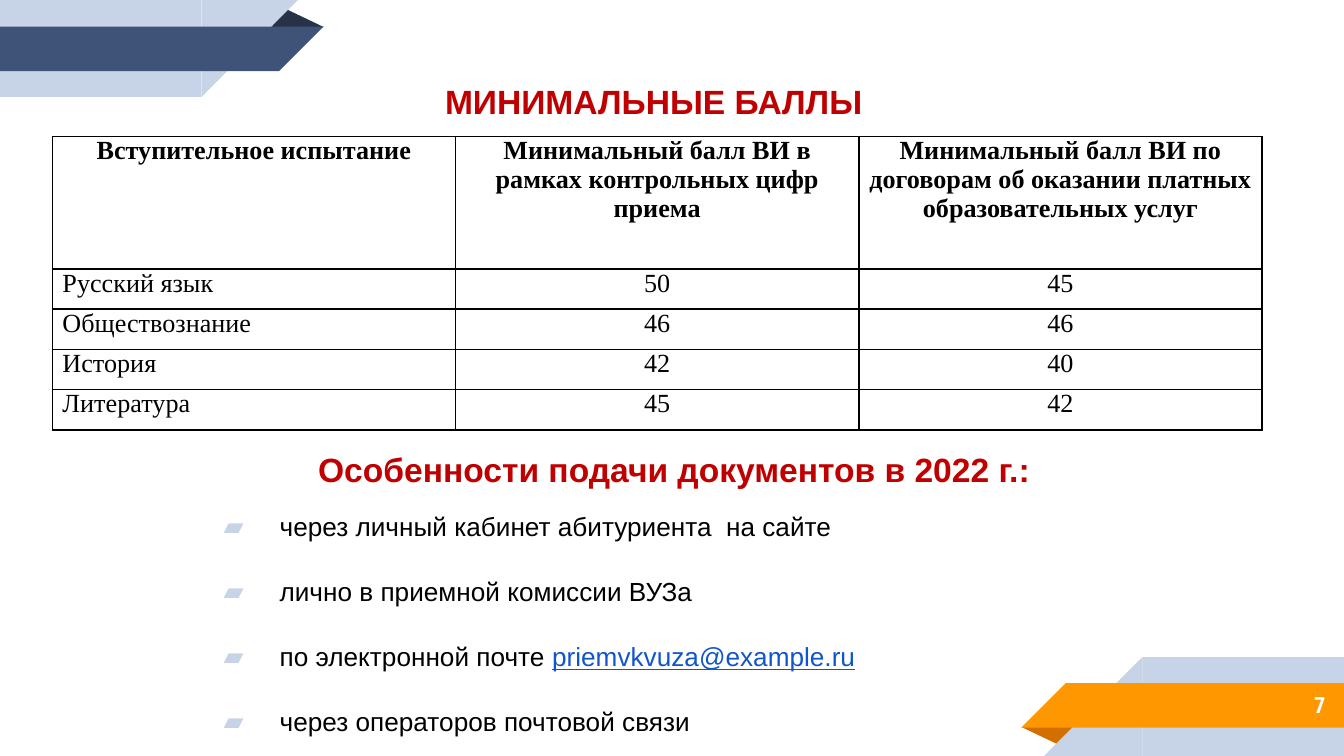
"""Build the slide with minimum entrance scores and ways to submit documents."""
from dataclasses import dataclass

from lxml import etree
from pptx import Presentation
from pptx.dml.color import RGBColor
from pptx.enum.shapes import MSO_SHAPE
from pptx.enum.text import MSO_ANCHOR, MSO_AUTO_SIZE, PP_ALIGN
from pptx.oxml.ns import qn
from pptx.shapes.base import BaseShape
from pptx.slide import Slide
from pptx.table import _Cell
from pptx.text.text import TextFrame, _Paragraph
from pptx.util import Pt

RECTANGLE = MSO_SHAPE.RECTANGLE
RIGHT_TRIANGLE = MSO_SHAPE.RIGHT_TRIANGLE
TRIANGLE = MSO_SHAPE.ISOSCELES_TRIANGLE
LEFT, CENTER, RIGHT = PP_ALIGN.LEFT, PP_ALIGN.CENTER, PP_ALIGN.RIGHT
TOP, MIDDLE = MSO_ANCHOR.TOP, MSO_ANCHOR.MIDDLE
NO_AUTOSIZE = MSO_AUTO_SIZE.NONE

BLACK = RGBColor(0x00, 0x00, 0x00)
WHITE = RGBColor(0xFF, 0xFF, 0xFF)
RED = RGBColor(0xC0, 0x00, 0x00)
PALE_BLUE = RGBColor(0xC7, 0xD3, 0xE6)
NAVY = RGBColor(0x3F, 0x53, 0x78)
DARK_NAVY = RGBColor(0x26, 0x32, 0x48)
ORANGE = RGBColor(0xFF, 0x98, 0x00)
DARK_ORANGE = RGBColor(0xD2, 0x6F, 0x00)
LINK_BLUE = RGBColor(0x11, 0x55, 0xCC)


@dataclass(frozen=True)
class Box:
    left: float
    top: float
    width: float
    height: float


@dataclass(frozen=True)
class RibbonPart:
    kind: MSO_SHAPE
    box: Box
    color: RGBColor
    flip: str = ""
    rotation: int = 0


@dataclass(frozen=True)
class TextStyle:
    font: str
    size: float
    color: RGBColor
    bold: bool = False
    alignment: PP_ALIGN = LEFT


RIBBON_PARTS = (
    RibbonPart(TRIANGLE, Box(547.2, 389.5, 31, 10), DARK_ORANGE, rotation=180),
    RibbonPart(RECTANGLE, Box(612, 352, 108, 53), PALE_BLUE),
    RibbonPart(RIGHT_TRIANGLE, Box(559.4, 352, 52.6, 53), PALE_BLUE, "flipH"),
    RibbonPart(RECTANGLE, Box(571, 366, 149, 23.8), ORANGE),
    RibbonPart(RIGHT_TRIANGLE, Box(547.2, 366, 23.8, 23.8), ORANGE, "flipH"),
    RibbonPart(TRIANGLE, Box(142.5, 4.5, 31, 10), DARK_NAVY),
    RibbonPart(RECTANGLE, Box(0, -1, 108, 53), PALE_BLUE),
    RibbonPart(RIGHT_TRIANGLE, Box(108, -1, 52.6, 53), PALE_BLUE, "flipV"),
    RibbonPart(RECTANGLE, Box(0, 14.3, 149.5, 23.8), NAVY),
    RibbonPart(RIGHT_TRIANGLE, Box(149.5, 14.3, 23.8, 23.8), NAVY, "flipV"),
)

HEADING = TextStyle("Arial", 18, RED, bold=True)
LIST_ITEM = TextStyle("Arial", 14, BLACK)
PAGE_NUMBER = TextStyle("Roboto Condensed", 12, WHITE, True, RIGHT)
TABLE_HEADER = TextStyle("Times New Roman", 14, BLACK, True, CENTER)
TABLE_SUBJECT = TextStyle("Times New Roman", 14, BLACK)
TABLE_SCORE = TextStyle("Times New Roman", 14, BLACK, alignment=CENTER)

SCORES = (
    (
        "Вступительное испытание",
        "Минимальный балл ВИ в рамках контрольных цифр приема",
        "Минимальный балл ВИ по договорам об оказании платных образовательных услуг",
    ),
    ("Русский язык", "50", "45"),
    ("Обществознание", "46", "46"),
    ("История", "42", "40"),
    ("Литература", "45", "42"),
)
HEADER_HEIGHT, ROW_HEIGHT = 70.8, 21.6

SUBMISSION_WAYS = (
    ("через личный кабинет абитуриента  на сайте", ""),
    ("лично в приемной комиссии ВУЗа", ""),
    ("по электронной почте ", "priemvkvuza@example.ru"),
    ("через операторов почтовой связи", ""),
)


def place(shape: BaseShape, box: Box) -> None:
    shape.left, shape.top = Pt(box.left), Pt(box.top)
    shape.width, shape.height = Pt(box.width), Pt(box.height)


def style_paragraph(paragraph: _Paragraph, style: TextStyle) -> None:
    paragraph.alignment = style.alignment
    font = paragraph.font
    font.name, font.size, font.bold = style.font, Pt(style.size), style.bold
    font.color.rgb = style.color


def prepare_frame(frame: TextFrame, anchor: MSO_ANCHOR = TOP) -> None:
    frame.auto_size = NO_AUTOSIZE
    frame.word_wrap = True
    frame.vertical_anchor = anchor


def draw_ribbon_part(slide: Slide, part: RibbonPart) -> None:
    shape = slide.shapes.add_shape(part.kind, 0, 0, 0, 0)
    place(shape, part.box)
    shape.shadow.inherit = False
    shape.fill.solid()
    shape.fill.fore_color.rgb = part.color
    shape.line.fill.background()
    shape.rotation = part.rotation
    if part.kind == TRIANGLE:
        shape.adjustments[0] = 0.324
    if part.flip:
        shape.element.spPr.find(qn("a:xfrm")).set(part.flip, "1")


def add_text(slide: Slide, box: Box, text: str, style: TextStyle, anchor: MSO_ANCHOR = TOP) -> None:
    shape = slide.shapes.add_textbox(0, 0, 0, 0)
    place(shape, box)
    prepare_frame(shape.text_frame, anchor)
    shape.text_frame.text = text
    style_paragraph(shape.text_frame.paragraphs[0], style)


def fill_title(slide: Slide) -> None:
    title = slide.shapes.title
    place(title, Box(231.2, 39.6, 286.8, 28.8))
    prepare_frame(title.text_frame)
    title.text_frame.text = "МИНИМАЛЬНЫЕ БАЛЛЫ"
    style_paragraph(title.text_frame.paragraphs[0], HEADING)


def format_cell(cell: _Cell, text: str, style: TextStyle) -> None:
    cell.text = text
    style_paragraph(cell.text_frame.paragraphs[0], style)
    cell.margin_left = cell.margin_right = Pt(5.4)
    cell.margin_top = cell.margin_bottom = 0
    properties = cell._tc.get_or_add_tcPr()
    for side in ("a:lnL", "a:lnR", "a:lnT", "a:lnB"):
        line = etree.SubElement(properties, qn(side), w=str(Pt(1)))
        fill = etree.SubElement(line, qn("a:solidFill"))
        etree.SubElement(fill, qn("a:srgbClr"), val=str(BLACK))
    cell.fill.solid()
    cell.fill.fore_color.rgb = WHITE


def add_score_table(slide: Slide) -> None:
    height = HEADER_HEIGHT + ROW_HEIGHT * (len(SCORES) - 1)
    table = slide.shapes.add_table(
        len(SCORES), len(SCORES[0]), Pt(28.1), Pt(73.2), Pt(648), Pt(height)
    ).table
    for row_index, row in enumerate(SCORES):
        table.rows[row_index].height = Pt(ROW_HEIGHT if row_index else HEADER_HEIGHT)
        for column_index, text in enumerate(row):
            body_style = TABLE_SCORE if column_index else TABLE_SUBJECT
            style = body_style if row_index else TABLE_HEADER
            format_cell(table.cell(row_index, column_index), text, style)


def fill_list(slide: Slide) -> None:
    body = slide.placeholders[1]
    place(body, Box(106.6, 270, 455.8, 129.6))
    frame = body.text_frame
    prepare_frame(frame)
    for index, (text, address) in enumerate(SUBMISSION_WAYS):
        paragraph = frame.add_paragraph() if index else frame.paragraphs[0]
        paragraph.space_before, paragraph.space_after = Pt(12), Pt(6)
        properties = paragraph._p.get_or_add_pPr()
        properties.set("marL", str(Pt(36)))
        properties.set("indent", str(Pt(-30)))
        bullet_color = etree.SubElement(properties, qn("a:buClr"))
        etree.SubElement(bullet_color, qn("a:srgbClr"), val=str(PALE_BLUE))
        etree.SubElement(properties, qn("a:buChar"), char="▰")
        style_paragraph(paragraph, LIST_ITEM)
        paragraph.add_run().text = text
        if address:
            run = paragraph.add_run()
            run.text = address
            run.font.color.rgb = LINK_BLUE
            run.font.underline = True


def main() -> None:
    presentation = Presentation()
    presentation.slide_width, presentation.slide_height = Pt(720), Pt(405)
    slide = presentation.slides.add_slide(presentation.slide_layouts[1])
    for part in RIBBON_PARTS:
        draw_ribbon_part(slide, part)
    add_text(slide, Box(599.8, 365, 117.4, 24.5), "7", PAGE_NUMBER, MIDDLE)
    fill_title(slide)
    add_score_table(slide)
    add_text(slide, Box(163.4, 237, 410.4, 28), "Особенности подачи документов в 2022 г.:", HEADING)
    fill_list(slide)
    presentation.save("out.pptx")


if __name__ == "__main__":
    main()
